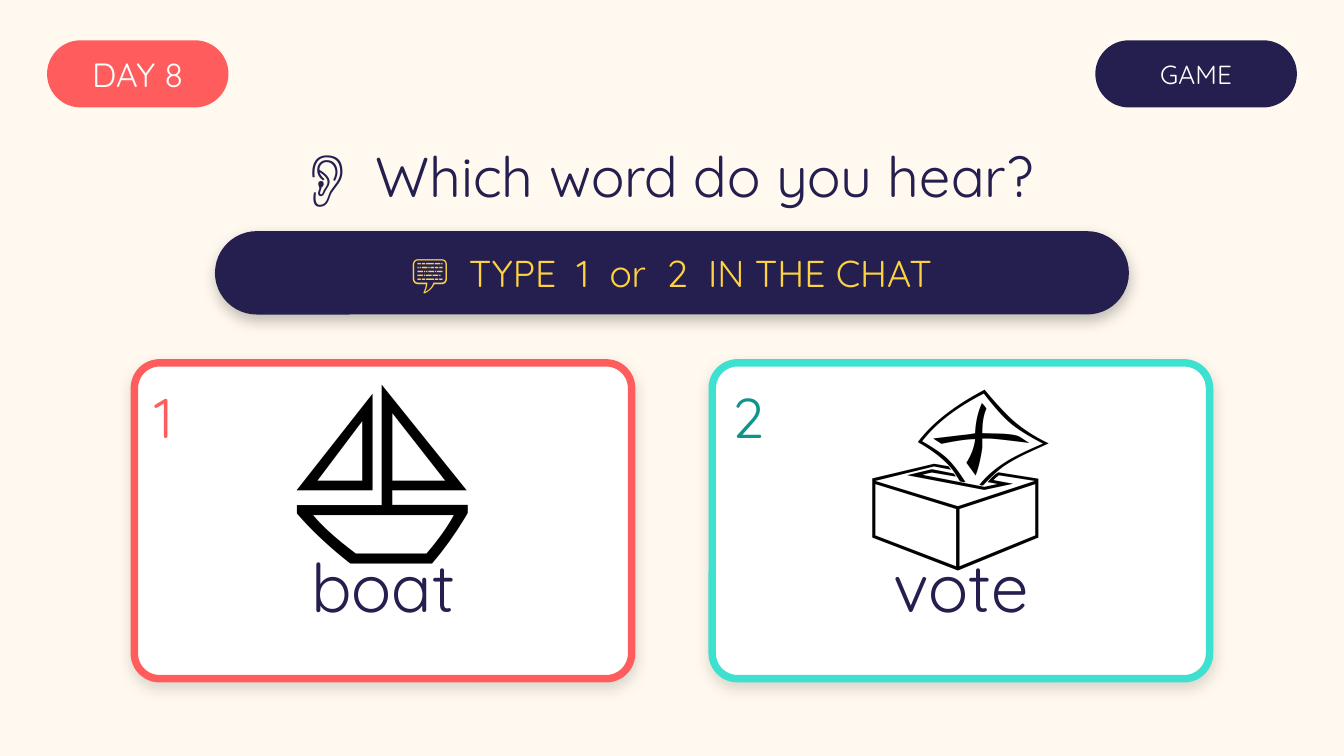
from lxml import etree
from pptx import Presentation
from pptx.dml.color import RGBColor
from pptx.enum.shapes import MSO_SHAPE as Shape
from pptx.enum.text import MSO_ANCHOR as Anchor, PP_ALIGN as Align
from pptx.oxml import parse_xml
from pptx.oxml.ns import nsdecls
from pptx.util import Pt

CREAM = RGBColor(0xFF, 0xF9, 0xEF)
CORAL = RGBColor(0xFF, 0x5D, 0x5D)
NAVY = RGBColor(0x24, 0x1F, 0x4E)
YELLOW = RGBColor(0xFF, 0xD2, 0x3F)
AQUA = RGBColor(0x3E, 0xE0, 0xCF)
TEAL = RGBColor(0x0E, 0x94, 0x88)
WHITE = RGBColor(0xFF, 0xFF, 0xFF)
BLACK = RGBColor(0, 0, 0)

# Content; lengths in points
WIDTH, HEIGHT = 720, 405
QUESTION = "👂  Which word do you hear?"
PILLS = [  # text, (left, top, width, height), fill, text colour, size, shadow %
    ("DAY 8", (25.2, 21.6, 97.2, 36), CORAL, WHITE, 18, 0),
    ("GAME", (586.8, 21.6, 108, 36), NAVY, WHITE, 14, 0),
    ("💬  TYPE  1  or  2  IN THE CHAT", (115.2, 123.84, 489.6, 44.64),
     NAVY, YELLOW, 20, 25),
]
CARDS = [  # symbol, word, border colour, number colour
    ("⛵", "boat", CORAL, CORAL),
    ("🗳️", "vote", AQUA, TEAL),
]
CARD_TOP, CARD_WIDTH, CARD_HEIGHT, CARD_GAP = 194.4, 266.4, 169.2, 43.2


def add_rounded(page, area, fill, radius, shadow=0):
    box = page.shapes.add_shape(Shape.ROUNDED_RECTANGLE, *map(Pt, area))
    box.adjustments[0] = radius
    box.fill.solid()
    box.fill.fore_color.rgb = fill
    box.line.fill.background()
    box.shadow.inherit = False
    if shadow:  # soft shadow straight below
        effects = box._element.spPr.find("{*}effectLst")
        effects.append(parse_xml(
            f'<a:outerShdw {nsdecls("a")} blurRad="{Pt(8)}" dist="{Pt(3)}" '
            f'dir="5400000" algn="bl" rotWithShape="0"><a:srgbClr val="000000">'
            f'<a:alpha val="{shadow * 1000}"/></a:srgbClr></a:outerShdw>'))
    return box


def add_text(page, text, area, size, colour, font="Quicksand",
             align=Align.CENTER, anchor=Anchor.MIDDLE, inset=True):
    frame = page.shapes.add_textbox(*map(Pt, area)).text_frame
    frame.word_wrap = True
    frame.vertical_anchor = anchor
    if not inset:
        frame.margin_left = frame.margin_right = 0
        frame.margin_top = frame.margin_bottom = 0
    frame.text = text
    para = frame.paragraphs[0]
    para.alignment = align
    span = para.runs[0]
    span.font.name = font
    span.font.size = Pt(size)
    span.font.color.rgb = colour


deck = Presentation()
deck.slide_width, deck.slide_height = Pt(WIDTH), Pt(HEIGHT)
page = deck.slides.add_slide(deck.slide_layouts[6])
page.background.fill.solid()
page.background.fill.fore_color.rgb = CREAM

# Question, tags and instruction
add_text(page, QUESTION, (0, 68.4, WIDTH, 50.4), 30, NAVY)
for text, area, fill, colour, size, shadow in PILLS:
    add_rounded(page, area, fill, 0.5, shadow)
    add_text(page, text, area, size, colour, inset=False)

# Answer cards, centred as a row
row_width = len(CARDS) * (CARD_WIDTH + CARD_GAP) - CARD_GAP
for index, (symbol, word, border, number_colour) in enumerate(CARDS):
    left = (WIDTH - row_width) / 2 + index * (CARD_WIDTH + CARD_GAP)
    card = add_rounded(page, (left, CARD_TOP, CARD_WIDTH, CARD_HEIGHT),
                       WHITE, 0.08, 15)
    card.line.color.rgb = border
    card.line.width = Pt(4)
    add_text(page, str(index + 1), (left + 10.8, CARD_TOP + 7.2, 57.6, 43.2),
             30, number_colour, align=Align.LEFT, inset=False)
    add_text(page, symbol, (left, CARD_TOP - 15.84, CARD_WIDTH, 108),
             103, BLACK, font="Calibri", anchor=Anchor.TOP)
    add_text(page, word, (left, CARD_TOP + 97.2, CARD_WIDTH, 44.64), 36, NAVY)

deck.save("out.pptx")
